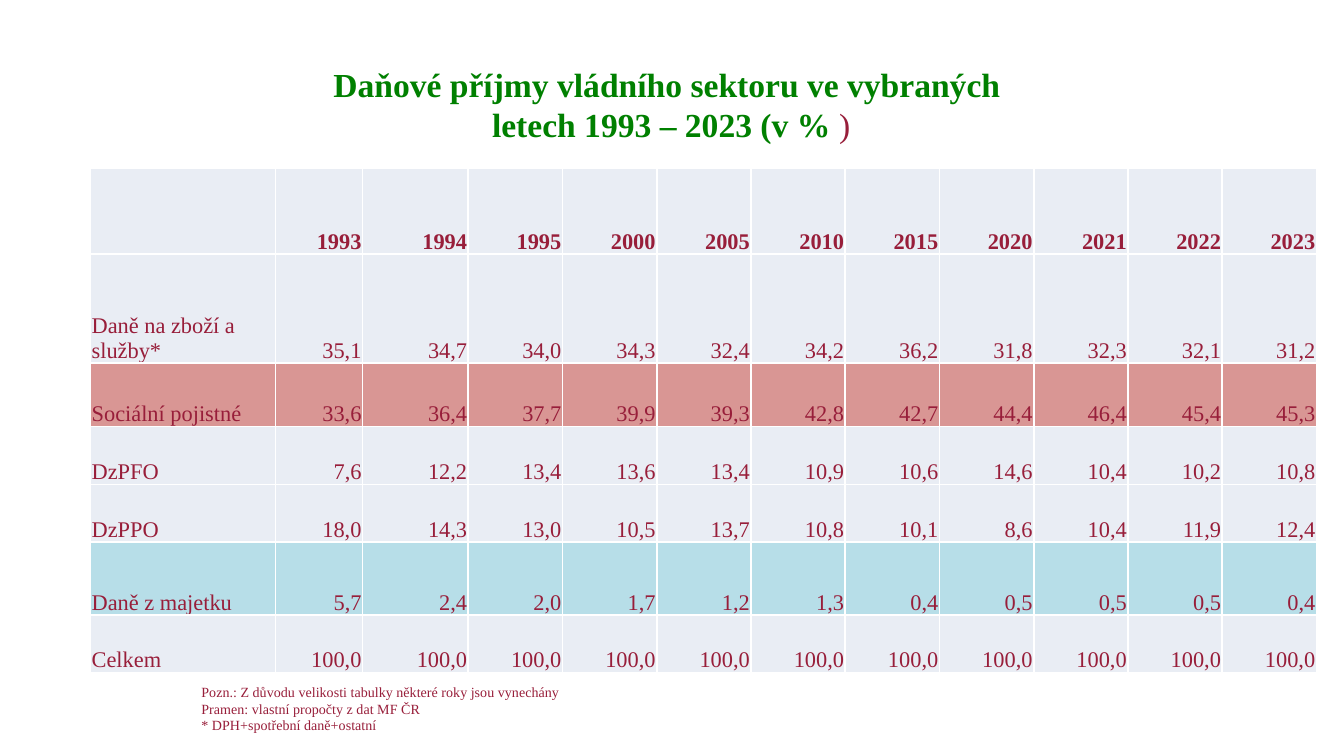
from dataclasses import dataclass

from lxml.etree import SubElement
from pptx import Presentation
from pptx.dml.color import RGBColor
from pptx.enum.text import MSO_ANCHOR as Anchor, MSO_AUTO_SIZE as AutoSize, PP_ALIGN as Align
from pptx.oxml.ns import qn
from pptx.util import Pt

FONT = "Times New Roman"
WINE, GREEN, WHITE = "981E3A", "008000", "FFFFFF"
PALE, ROSE, AQUA = "E9EDF4", "D99694", "B7DEE8"


@dataclass
class TableRow:
    label: str
    values: str
    height: float
    fill: str = PALE
    bold: bool = False


ROWS = [
    TableRow("", "1993 1994 1995 2000 2005 2010 2015 2020 2021 2022 2023", 45.9, bold=True),
    TableRow("Daně na zboží a služby*",
             "35,1 34,7 34,0 34,3 32,4 34,2 36,2 31,8 32,3 32,1 31,2", 58.4),
    TableRow("Sociální pojistné",
             "33,6 36,4 37,7 39,9 39,3 42,8 42,7 44,4 46,4 45,4 45,3", 34.1, ROSE),
    TableRow("DzPFO", "7,6 12,2 13,4 13,6 13,4 10,9 10,6 14,6 10,4 10,2 10,8", 31),
    TableRow("DzPPO", "18,0 14,3 13,0 10,5 13,7 10,8 10,1 8,6 10,4 11,9 12,4", 31),
    TableRow("Daně z majetku", "5,7 2,4 2,0 1,7 1,2 1,3 0,4 0,5 0,5 0,5 0,4", 39, AQUA),
    TableRow("Celkem", " ".join(["100,0"] * 11), 31),
]
COLUMN_WIDTHS = [99, 46.8, 56.6] + [50.5] * 9
NOTES = [
    "Pozn.: Z důvodu velikosti tabulky některé roky jsou vynechány",
    "Pramen: vlastní propočty z dat MF ČR",
    "* DPH+spotřební daně+ostatní",
]


def color(value: str) -> RGBColor:
    return RGBColor.from_string(value)


def add_run(paragraph, text: str, size: float, hue: str = WINE, bold: bool = False) -> None:
    run = paragraph.add_run()
    run.text = text
    run.font.name = FONT
    run.font.size = Pt(size)
    run.font.bold = bold
    run.font.color.rgb = color(hue)


def set_borders(cell) -> None:
    """White 1 pt lines; they must come before the fill in the cell properties."""
    properties = cell._tc.get_or_add_tcPr()
    for side in ("a:lnL", "a:lnR", "a:lnT", "a:lnB"):
        line = SubElement(properties, qn(side), w=str(Pt(1)))
        SubElement(SubElement(line, qn("a:solidFill")), qn("a:srgbClr"), val=WHITE)


def fill_cell(cell, text: str, row: TableRow, align: Align) -> None:
    set_borders(cell)
    cell.fill.solid()
    cell.fill.fore_color.rgb = color(row.fill)
    cell.vertical_anchor = Anchor.BOTTOM
    cell.margin_left = cell.margin_right = cell.margin_top = Pt(0.6)
    cell.margin_bottom = Pt(0)
    if text:
        paragraph = cell.text_frame.paragraphs[0]
        paragraph.alignment = align
        add_run(paragraph, text, 12, bold=row.bold)


def add_title(slide) -> None:
    title = slide.shapes.title
    title.left, title.top, title.width, title.height = Pt(116.6), Pt(31), Pt(486), Pt(32.4)
    frame = title.text_frame
    frame.word_wrap = True
    frame.auto_size = AutoSize.NONE
    frame.vertical_anchor = Anchor.TOP
    paragraph = frame.paragraphs[0]
    paragraph.alignment = Align.CENTER
    paragraph.line_spacing = Pt(21.4)
    add_run(paragraph, "Daňové příjmy vládního sektoru ve vybraných ", 18, GREEN, True)
    paragraph.add_line_break()
    add_run(paragraph, "letech 1993 – 2023 (v %", 18, GREEN, True)
    add_run(paragraph, " )", 18)


def add_tax_table(slide) -> None:
    heights = [row.height for row in ROWS]
    table = slide.shapes.add_table(
        len(ROWS), len(COLUMN_WIDTHS), Pt(48.5), Pt(90.2),
        Pt(sum(COLUMN_WIDTHS)), Pt(sum(heights))).table
    table.horz_banding = False
    for column, width in zip(table.columns, COLUMN_WIDTHS):
        column.width = Pt(width)
    for table_row, row in zip(table.rows, ROWS):
        table_row.height = Pt(row.height)
        for index, text in enumerate([row.label, *row.values.split()]):
            fill_cell(table_row.cells[index], text, row, Align.RIGHT if index else Align.LEFT)


def add_notes(slide) -> None:
    frame = slide.shapes.add_textbox(Pt(100.8), Pt(362.4), Pt(314), Pt(34.2)).text_frame
    frame.word_wrap = True
    frame.auto_size = AutoSize.SHAPE_TO_FIT_TEXT
    frame.vertical_anchor = Anchor.MIDDLE
    for index, note in enumerate(NOTES):
        paragraph = frame.add_paragraph() if index else frame.paragraphs[0]
        add_run(paragraph, note, 7.5)


def main() -> None:
    presentation = Presentation()
    presentation.slide_width, presentation.slide_height = Pt(720), Pt(405)
    slide = presentation.slides.add_slide(presentation.slide_layouts[5])  # title only
    add_title(slide)
    add_tax_table(slide)
    add_notes(slide)
    presentation.save("out.pptx")


if __name__ == "__main__":
    main()
